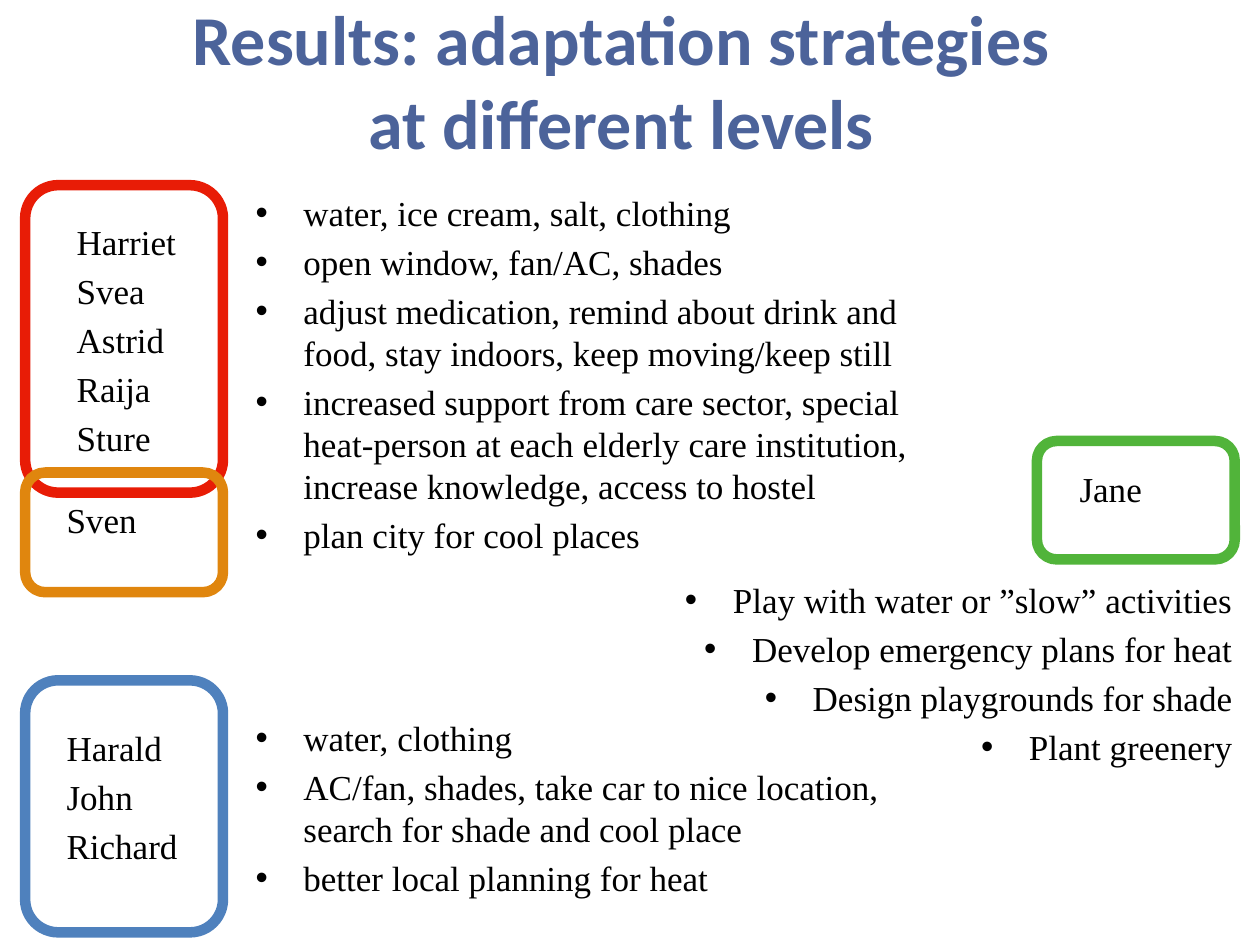
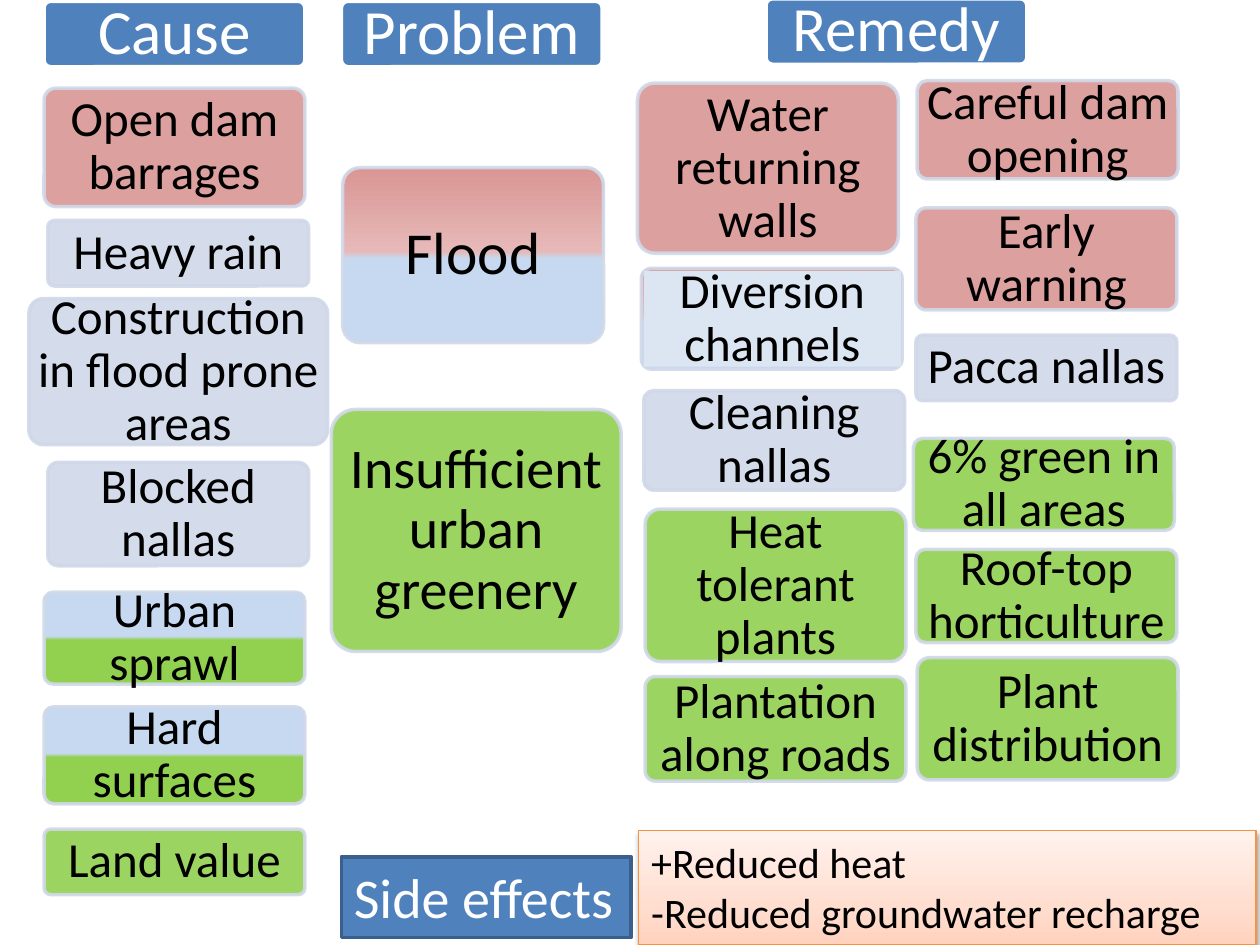
from lxml import etree
from pptx import Presentation
from pptx import util as u
from pptx.dml.color import RGBColor
from pptx.enum import shapes, text
from pptx.oxml.ns import qn

BLUE, ROSE, GREEN, PALE, SKY = "4F81BD", "D99694", "92D050", "D0D8E8", "C6D9F1"
BLACK, WHITE = "000000", "FFFFFF"
SERIF, SANS = "Times New Roman", "Calibri"
ROUND, RECT = shapes.MSO_SHAPE.ROUNDED_RECTANGLE, shapes.MSO_SHAPE.RECTANGLE
LEFT, MID, RIGHT = text.PP_ALIGN.LEFT, text.PP_ALIGN.CENTER, text.PP_ALIGN.RIGHT
TOP, CENTRE = text.MSO_ANCHOR.TOP, text.MSO_ANCHOR.MIDDLE


def paint(fill, tone):
    """Fill with one hex colour, or with (position, hex) stops from the bottom up."""
    if isinstance(tone, str):
        fill.solid()
        fill.fore_color.rgb = RGBColor.from_string(tone)
        return
    fill.gradient()
    fill.gradient_angle = 90
    stops = fill.gradient_stops[0]._gs.getparent()
    for old in list(stops):
        stops.remove(old)
    for pos, code in tone:
        stop = etree.SubElement(stops, qn("a:gs"), pos=str(pos * 1000))
        etree.SubElement(stop, qn("a:srgbClr"), val=code)


def write(box, words, size, face=SANS, tone=BLACK, align=LEFT, anchor=TOP,
          pitch=None, gap=0, bullet=False, bold=False):
    frame = box.text_frame
    frame.text = "\n".join(words)
    frame.word_wrap = True
    frame.vertical_anchor = anchor
    for i, para in enumerate(frame.paragraphs):
        if bullet:
            props = para._p.get_or_add_pPr()
            props.set("marL", str(u.Inches(0.38)))
            props.set("indent", str(-u.Inches(0.38)))
            etree.SubElement(props, qn("a:buFont"), typeface="Arial")
            etree.SubElement(props, qn("a:buChar"), char="•")
        para.alignment = align
        if pitch:
            para.line_spacing = pitch
        if i and gap:
            para.space_before = u.Pt(gap)
        for run in para.runs:
            run.font.size, run.font.name, run.font.bold = u.Pt(size), face, bold
            paint(run.font.fill, tone)


deck = Presentation()
deck.slide_width, deck.slide_height = u.Inches(10), u.Inches(7.5)
blank = deck.slide_layouts[6]

# Slide 1: title
page = deck.slides.add_slide(blank)
head = page.shapes.add_textbox(*map(u.Inches, (0.98, 0, 7.9, 1.26)))
write(head, ["Results: adaptation strategies", "at different levels"], 40,
      tone="4C639A", align=MID, anchor=CENTRE, bold=True)

# Frames round each group of people
frames = [
    (0.2, 1.47, 2.44, "E81C06"),
    (0.2, 5.4, 2, BLUE),
    (0.2, 3.75, 0.95, "E0860E"),
    (8.23, 3.5, 0.94, "51B43A"),
]
for x, y, high, tone in frames:
    ring = page.shapes.add_shape(ROUND, *map(u.Inches, (x, y, 1.57, high)))
    ring.shadow.inherit = False
    ring.fill.background()
    paint(ring.line.fill, tone)
    ring.line.width = u.Pt(6)

# Names and their strategies
lists = [
    ((0.51, 1.7, 1.21, 2.12), LEFT, False,
     ["Harriet", "Svea", "Astrid", "Raija", "Sture"]),
    ((0.43, 5.72, 1.21, 1.42), LEFT, False, ["Harald", "John", "Richard"]),
    ((0.43, 3.91, 1.36, 0.78), LEFT, False, ["Sven"]),
    ((8.47, 3.66, 1.36, 0.78), LEFT, False, ["Jane"]),
    ((1.93, 1.47, 5.59, 3.46), LEFT, True, [
        "water, ice cream, salt, clothing",
        "open window, fan/AC, shades",
        "adjust medication, remind about drink and food, stay indoors, "
        "keep moving/keep still",
        "increased support from care sector, special heat-person at each "
        "elderly care institution, increase knowledge, access to hostel",
        "plan city for cool places"]),
    ((1.93, 5.64, 5.2, 1.73), LEFT, True, [
        "water, clothing",
        "AC/fan, shades, take car to nice location, search for shade and cool place",
        "better local planning for heat"]),
    ((4.92, 4.54, 4.96, 1.73), RIGHT, True, [
        "Play with water or ”slow” activities",
        "Develop emergency plans for heat",
        "Design playgrounds for shade",
        "Plant greenery"]),
]
for place, align, bullet, words in lists:
    box = page.shapes.add_textbox(*map(u.Inches, place))
    write(box, words, 20, SERIF, align=align, pitch=u.Pt(24), gap=4, bullet=bullet)

# Slide 2: column heads and cards
page = deck.slides.add_slide(blank)
flood = [(0, SKY), (48, SKY), (52, "E6B9B8"), (100, ROSE)]
sprawl = [(0, GREEN), (48, GREEN), (52, SKY), (100, SKY)]
cards = [
    # left, top, width, height, fill, size, words
    (0.35, 0.01, 2.07, 0.52, BLUE, 36, "Cause"),
    (2.71, 0.01, 2.07, 0.52, BLUE, 36, "Problem"),
    (6.08, -0.01, 2.07, 0.52, BLUE, 36, "Remedy"),
    # Causes
    (0.35, 0.7, 2.07, 0.94, ROSE, 28, "Open dam barrages"),
    (0.38, 1.75, 2.07, 0.52, PALE, 28, "Heavy rain"),
    (0.23, 2.37, 2.37, 1.16, PALE, 28, "Construction in flood prone areas"),
    (0.38, 3.67, 2.07, 0.82, PALE, 28, "Blocked nallas"),
    (0.35, 4.7, 2.07, 0.73, sprawl, 28, "Urban sprawl"),
    (0.35, 5.61, 2.07, 0.77, sprawl, 28, "Hard surfaces"),
    (0.35, 6.58, 2.07, 0.52, GREEN, 28, "Land value"),
    # Problems
    (2.72, 1.33, 2.07, 1.39, flood, 34, "Flood"),
    (2.63, 3.25, 2.3, 1.92, GREEN, 32, "Insufficient urban greenery"),
    # Remedies, first column
    (5.06, 0.66, 2.07, 1.35, ROSE, 28, "Water returning walls"),
    (5.09, 2.13, 2.07, 0.8, flood, 28, ""),
    (5.11, 3.1, 2.07, 0.79, PALE, 28, "Cleaning nallas"),
    (5.12, 4.04, 2.07, 1.21, GREEN, 28, "Heat tolerant plants"),
    (5.12, 5.37, 2.07, 0.83, GREEN, 28, "Plantation along roads"),
    # Remedies, second column
    (7.28, 0.64, 2.07, 0.78, ROSE, 28, "Careful dam opening"),
    (7.27, 1.65, 2.07, 0.81, ROSE, 28, "Early warning"),
    (7.27, 2.66, 2.07, 0.52, PALE, 28, "Pacca nallas"),
    (7.25, 3.48, 2.07, 0.73, GREEN, 28, "6% green in all areas"),
    (7.27, 4.36, 2.07, 0.74, GREEN, 28, "Roof-top horticulture"),
    (7.28, 5.22, 2.07, 0.97, GREEN, 28, "Plant distribution"),
]
for *place, tone, size, words in cards:
    card = page.shapes.add_shape(ROUND, *map(u.Inches, place))
    card.shadow.inherit = False
    card.adjustments[0] = 0.1
    title = tone == BLUE
    paint(card.fill, tone)
    paint(card.line.fill, WHITE if title else PALE)
    card.line.width = u.Pt(2)
    if not title:
        # Only solid fills and lines are see-through
        root = card._element.spPr
        part = root if isinstance(tone, str) else root.find(qn("a:ln"))
        for code in part.iter(qn("a:srgbClr")):
            etree.SubElement(code, qn("a:alpha"), val="90000")
    frame = card.text_frame
    frame.margin_left = frame.margin_right = 0
    frame.margin_top = frame.margin_bottom = u.Inches(0.02)
    if words:
        write(card, [words], size, tone=WHITE if title else BLACK,
              align=MID, anchor=CENTRE, pitch=0.9)

# Plain panels: diversion, side effects and their list
glow = [(0, "FFD2BD"), (35, "FFDED0"), (100, "FFF2ED")]
panels = [
    ((5.11, 2.15, 2.04, 0.76), "DCE6F2", None, 0, 28, BLACK, ["Diversion channels"]),
    ((2.71, 6.8, 2.3, 0.64), BLUE, "3A5F8C", 2, 32, WHITE, ["Side effects"]),
    ((5.07, 6.59, 4.9, 0.91), glow, "F69240", 0.75, 24, BLACK,
     ["+Reduced heat", "-Reduced groundwater recharge"]),
]
for place, tone, edge, wide, size, ink, words in panels:
    panel = page.shapes.add_shape(RECT, *map(u.Inches, place))
    panel.shadow.inherit = False
    paint(panel.fill, tone)
    if edge:
        paint(panel.line.fill, edge)
        panel.line.width = u.Pt(wide)
        write(panel, words, size, tone=ink)
    else:
        panel.line.fill.background()
        frame = panel.text_frame
        frame.margin_left = frame.margin_right = u.Inches(0.02)
        frame.margin_top = frame.margin_bottom = u.Inches(0.02)
        write(panel, words, size, tone=ink, align=MID, anchor=CENTRE, pitch=0.9)
    if tone is glow:
        effect = panel._element.spPr.find(qn("a:effectLst"))
        shade = etree.SubElement(effect, qn("a:outerShdw"), blurRad=str(u.Pt(3.1)),
                                 dist=str(u.Pt(1.6)), dir="5400000", rotWithShape="0")
        code = etree.SubElement(shade, qn("a:srgbClr"), val=BLACK)
        etree.SubElement(code, qn("a:alpha"), val="38000")

deck.save("out.pptx")
